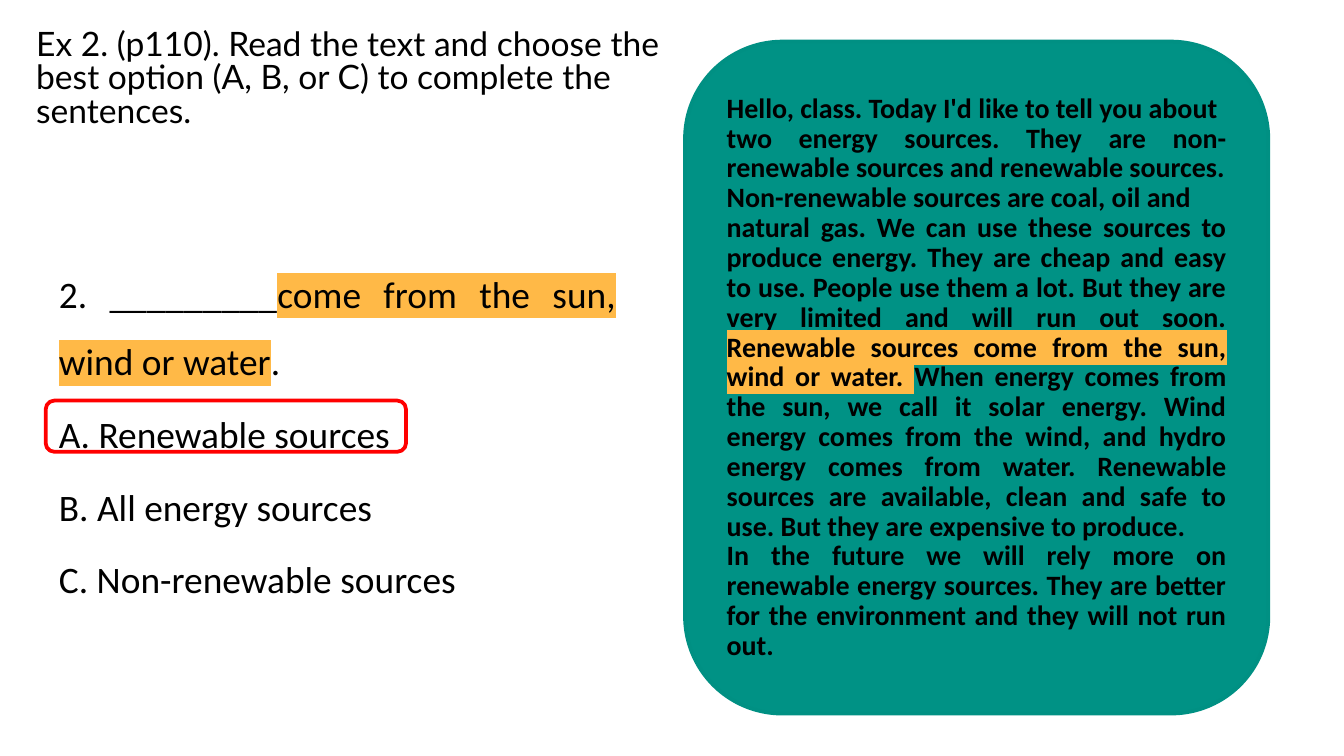
from lxml.etree import SubElement
from pptx import Presentation
from pptx.dml.color import RGBColor
from pptx.enum.shapes import MSO_SHAPE
from pptx.enum.text import MSO_ANCHOR, MSO_AUTO_SIZE, PP_ALIGN
from pptx.oxml.ns import qn
from pptx.util import Pt

BLACK = "000000"
WHITE = "FFFFFF"
AMBER = "FFB947"
TEAL = "009285"
TEAL_EDGE = "009083"
RED = "FF0000"

TITLE = ("Ex 2. (p110). Read the text and choose the best option "
         "(A, B, or C) to complete the sentences.")
PASSAGE = [
    [("Hello, class. Today I'd like to tell you about", None)],
    [("two energy sources. They are non-renewable sources and "
      "renewable sources.", None)],
    [("Non-renewable sources are coal, oil and ", None)],
    [("natural gas. We can use these sources to produce energy. They are "
      "cheap and easy to use. People use them a lot. But they are very "
      "limited and will run out soon. ", None),
     ("Renewable sources come from the sun, wind or water. ", AMBER),
     ("When energy comes from the sun, we call it solar energy. Wind energy "
      "comes from the wind, and hydro energy comes from water. Renewable "
      "sources are available, clean and safe to use. But they are expensive "
      "to produce.", None)],
    [("In the future we will rely more on renewable energy sources. They are "
      "better for the environment and they will not run out.", None)],
]
QUESTION = [
    [("2. _________", None),
     ("come from the sun, wind or water", AMBER),
     (".", None)],
    [("A. Renewable sources", None)],
    [("B. All energy sources", None)],
    [("C. Non-renewable sources", None)],
]


def color(hex_code):
    return RGBColor.from_string(hex_code)


def add_color_child(parent, tag, hex_code):
    child = SubElement(parent, qn(tag))
    SubElement(child, qn("a:srgbClr")).set("val", hex_code)
    return child


def add_run(paragraph, text, font_name, size, bold=False, highlight=None):
    run = paragraph.add_run()
    run.text = text
    run.font.size = Pt(size)
    run.font.bold = bold
    run.font.color.rgb = color(BLACK)
    if highlight:
        add_color_child(run.font._element, "a:highlight", highlight)
    run.font.name = font_name
    return run


def write_paragraphs(frame, content, size, spacing, before=0, bold=False):
    frame.word_wrap = True
    for index, pieces in enumerate(content):
        paragraph = frame.add_paragraph() if index else frame.paragraphs[0]
        paragraph.alignment = PP_ALIGN.JUSTIFY
        paragraph.line_spacing = spacing
        paragraph.space_before = Pt(before)
        for text, highlight in pieces:
            add_run(paragraph, text, "Calibri", size, bold, highlight)


def outline_text(run, hex_code, width):
    properties = run.font._element
    outline = SubElement(properties, qn("a:ln"))
    outline.set("w", str(Pt(width)))
    add_color_child(outline, "a:solidFill", hex_code)
    properties.insert(0, outline)


def add_title(slide, left, top, width, height):
    title = slide.shapes.title
    title.left, title.top = Pt(left), Pt(top)
    title.width, title.height = Pt(width), Pt(height)
    frame = title.text_frame
    frame.word_wrap = True
    frame.auto_size = MSO_AUTO_SIZE.NONE
    frame.vertical_anchor = MSO_ANCHOR.TOP
    paragraph = frame.paragraphs[0]
    paragraph.alignment = PP_ALIGN.LEFT
    paragraph.line_spacing = Pt(18)
    paragraph.space_before = Pt(0)
    outline_text(add_run(paragraph, TITLE, "Lato", 18), WHITE, 0.75)


def add_rounded_box(slide, left, top, width, height, line, fill=None):
    box = slide.shapes.add_shape(MSO_SHAPE.ROUNDED_RECTANGLE, Pt(left), Pt(top),
                                 Pt(width), Pt(height))
    box.shadow.inherit = False
    box.line.color.rgb = color(line)
    box.line.width = Pt(2)
    if fill:
        box.fill.solid()
        box.fill.fore_color.rgb = color(fill)
    else:
        box.fill.background()
    return box


def add_question(slide, left, top, width, height):
    question = slide.shapes.add_textbox(Pt(left), Pt(top), Pt(width), Pt(height))
    question.fill.solid()
    question.fill.fore_color.rgb = color(WHITE)
    write_paragraphs(question.text_frame, QUESTION, 20, 1.5, before=3)


def main():
    presentation = Presentation()
    presentation.slide_width, presentation.slide_height = Pt(720), Pt(405)
    slide = presentation.slides.add_slide(presentation.slide_layouts[5])

    add_title(slide, 12.2, 12.2, 355, 62)
    passage = add_rounded_box(slide, 367, 22.3, 312.5, 360, TEAL_EDGE, TEAL)
    passage.text_frame.vertical_anchor = MSO_ANCHOR.MIDDLE
    write_paragraphs(passage.text_frame, PASSAGE, 15, Pt(16), bold=True)
    add_question(slide, 24.5, 129.6, 312.5, 194.4)
    add_rounded_box(slide, 24.5, 214.6, 193, 27.4, RED)

    presentation.save("out.pptx")


if __name__ == "__main__":
    main()
